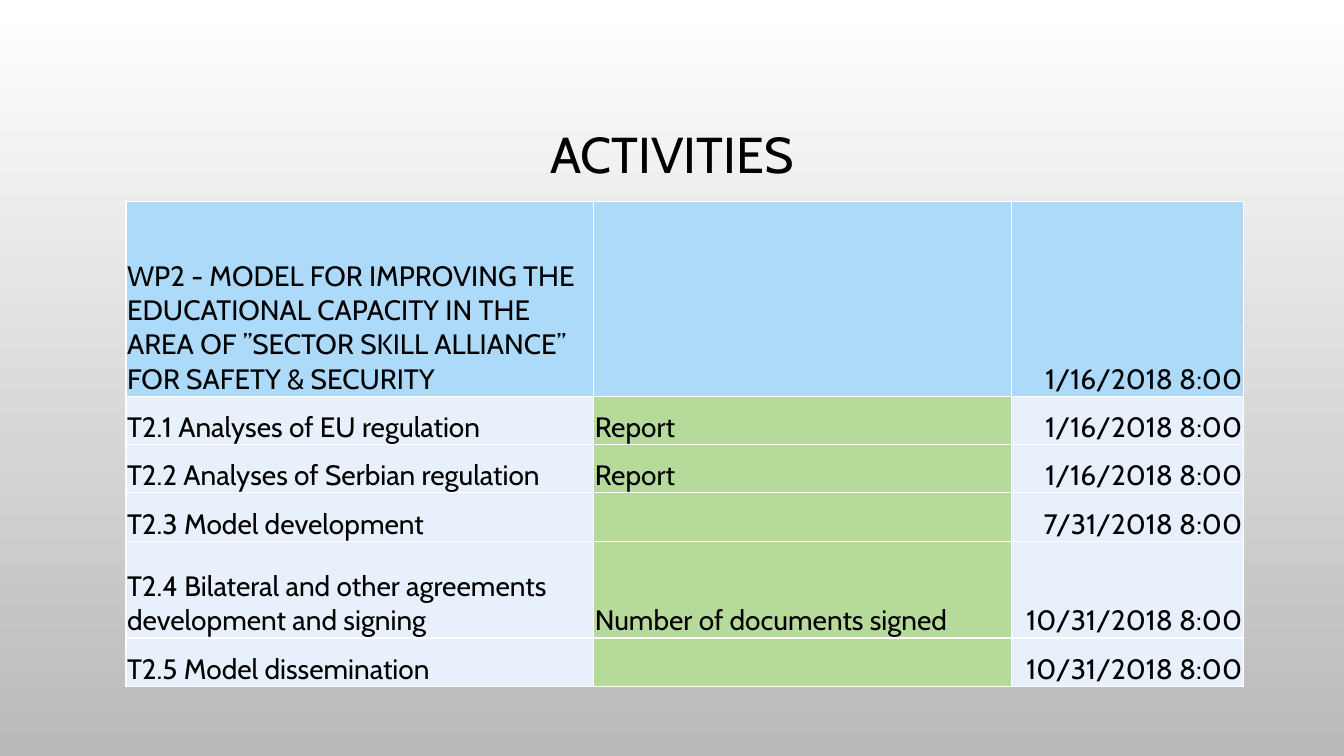
from lxml import etree
from pptx import Presentation
from pptx.dml.color import RGBColor
from pptx.enum.text import MSO_ANCHOR, PP_ALIGN
from pptx.oxml.ns import qn
from pptx.util import Pt

TITLE = "ACTIVITIES"
ROWS = [
    ("WP2 - MODEL FOR IMPROVING THE EDUCATIONAL CAPACITY IN THE AREA OF "
     "’’SECTOR SKILL ALLIANCE’’ FOR SAFETY & SECURITY", "", "1/16/2018 8:00"),
    ("T2.1 Analyses of EU regulation", "Report", "1/16/2018 8:00"),
    ("T2.2 Analyses of Serbian regulation", "Report", "1/16/2018 8:00"),
    ("T2.3 Model development", "", "7/31/2018 8:00"),
    ("T2.4 Bilateral and other agreements development and signing",
     "Number of documents signed", "10/31/2018 8:00"),
    ("T2.5 Model dissemination", "", "10/31/2018 8:00"),
]

EMU_PER_PX = 9144
SLIDE_SIZE = (1333, 750)
TITLE_BOX = (100, 68, 1133, 175)
TABLE_ORIGIN = (125, 200)
COLUMN_WIDTHS = (464, 414, 230)
LINE_HEIGHT = 48
ROW_HEIGHTS = (193, LINE_HEIGHT, LINE_HEIGHT, LINE_HEIGHT, 2 * LINE_HEIGHT, LINE_HEIGHT)
INSET = 1

FONT = "Cabin"
BLACK = RGBColor(0x00, 0x00, 0x00)
WHITE = RGBColor(0xFF, 0xFF, 0xFF)
GREY = RGBColor(0xB9, 0xB9, 0xB9)
HEADER_BLUE = RGBColor(0xAC, 0xDA, 0xF8)
PALE_BLUE = RGBColor(0xE8, 0xF0, 0xFC)
GREEN = RGBColor(0xB6, 0xDA, 0x9A)
BODY_FILLS = (PALE_BLUE, GREEN, PALE_BLUE)

LEFT, CENTER, RIGHT = PP_ALIGN.LEFT, PP_ALIGN.CENTER, PP_ALIGN.RIGHT
MIDDLE, BOTTOM = MSO_ANCHOR.MIDDLE, MSO_ANCHOR.BOTTOM
COLUMN_ALIGNMENTS = (LEFT, LEFT, RIGHT)


def px(length):
    return length * EMU_PER_PX


def format_paragraph(paragraph, size, alignment):
    paragraph.alignment = alignment
    paragraph.font.name = FONT
    paragraph.font.size = Pt(size)
    paragraph.font.color.rgb = BLACK


def add_borders(cell):
    properties = cell._tc.get_or_add_tcPr()
    for side in ("a:lnL", "a:lnR", "a:lnT", "a:lnB"):
        line = etree.SubElement(properties, qn(side), w=str(Pt(1)))
        fill = etree.SubElement(line, qn("a:solidFill"))
        etree.SubElement(fill, qn("a:srgbClr"), val=str(WHITE))


def fill_background(slide):
    fill = slide.background.fill
    fill.gradient()
    fill.gradient_angle = 270
    for stop, color in zip(fill.gradient_stops, (WHITE, GREY)):
        stop.color.rgb = color


def add_title(slide):
    title = slide.shapes.title
    title.left, title.top, title.width, title.height = map(px, TITLE_BOX)
    frame = title.text_frame
    frame.text = TITLE
    frame.word_wrap = True
    frame.vertical_anchor = MIDDLE
    paragraph = frame.paragraphs[0]
    paragraph.line_spacing = 0.9
    format_paragraph(paragraph, 36, CENTER)


def add_activity_table(slide):
    left, top = TABLE_ORIGIN
    table = slide.shapes.add_table(
        len(ROWS), len(COLUMN_WIDTHS), px(left), px(top),
        px(sum(COLUMN_WIDTHS)), px(sum(ROW_HEIGHTS))).table
    table.first_row = False
    table.horz_banding = False
    for column, width in zip(table.columns, COLUMN_WIDTHS):
        column.width = px(width)
    for row, height in zip(table.rows, ROW_HEIGHTS):
        row.height = px(height)

    for row_index, texts in enumerate(ROWS):
        for column_index, text in enumerate(texts):
            cell = table.cell(row_index, column_index)
            cell.text = text
            cell.vertical_anchor = BOTTOM
            cell.margin_left = cell.margin_right = cell.margin_top = px(INSET)
            cell.margin_bottom = 0
            add_borders(cell)
            cell.fill.solid()
            cell.fill.fore_color.rgb = BODY_FILLS[column_index] if row_index else HEADER_BLUE
            format_paragraph(cell.text_frame.paragraphs[0], 20, COLUMN_ALIGNMENTS[column_index])


def main():
    presentation = Presentation()
    presentation.slide_width, presentation.slide_height = map(px, SLIDE_SIZE)
    slide = presentation.slides.add_slide(presentation.slide_layouts.get_by_name("Title Only"))
    fill_background(slide)
    add_title(slide)
    add_activity_table(slide)
    presentation.save("out.pptx")


if __name__ == "__main__":
    main()
